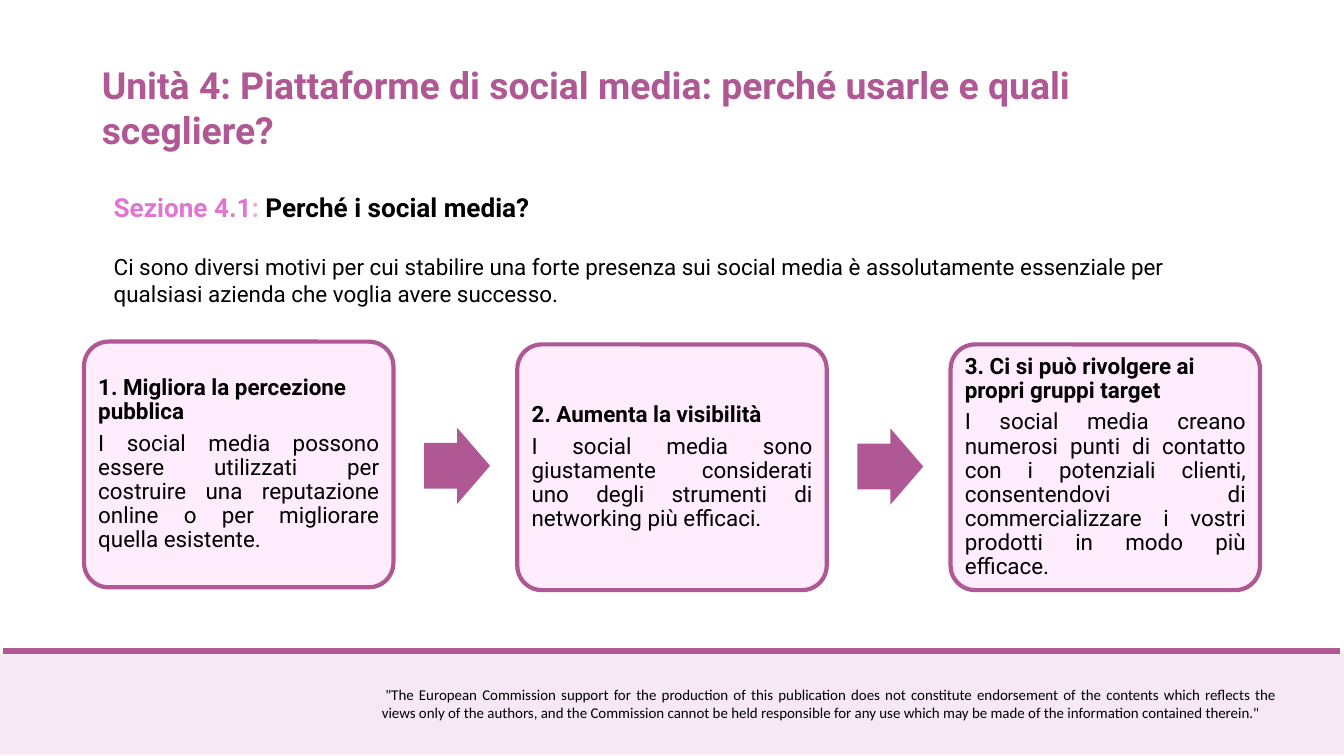
"""Build the slide on why companies should use social media."""
from pptx import Presentation
from pptx.dml.color import RGBColor
from pptx.enum.shapes import MSO_CONNECTOR, MSO_SHAPE
from pptx.enum.text import MSO_ANCHOR, MSO_AUTO_SIZE, PP_ALIGN
from pptx.oxml.ns import qn
from pptx.util import Emu, Pt
from lxml.etree import SubElement

COLORS = {
    "plum": "B05894",
    "orchid": "E076D1",
    "pink": "ECAAE3",
    "card": "FFECFC",
    "band": "F6E9F5",
    "black": "000000",
}
TITLE = "Unità 4: Piattaforme di social media: perché usarle e quali scegliere?"
SECTION = [("Sezione 4.1", "orchid"), (": ", "pink"), ("Perché i social media?", "black")]
INTRO = (
    "Ci sono diversi motivi per cui stabilire una forte presenza sui social media "
    "è assolutamente essenziale per qualsiasi azienda che voglia avere successo."
)
CARDS = [
    (
        "1. Migliora la percezione pubblica",
        "I social media possono essere utilizzati per costruire una reputazione "
        "online o per migliorare quella esistente.",
    ),
    (
        "2. Aumenta la visibilità",
        "I social media sono giustamente considerati uno degli strumenti di "
        "networking più efficaci.",
    ),
    (
        "3. Ci si può rivolgere ai propri gruppi target",
        "I social media creano numerosi punti di contatto con i potenziali clienti, "
        "consentendovi di commercializzare i vostri prodotti in modo più efficace.",
    ),
]
DISCLAIMER = (
    '"The European Commission support for the production of this publication does not '
    "constitute endorsement of the contents which reflects the views only of the authors, "
    "and the Commission cannot be held responsible for any use which may be made of the "
    'information contained therein."'
)

SLIDE_SIZE = (1920, 1080)
CARD_LEFT, CARD_TOPS, CARD_SIZE = 120, (488, 492, 492), (442, 351)
ARROW_LEFT, ARROW_TOPS, ARROW_SIZE = 606, (611, 612), (94, 109)
STEP = 619
CARD_INSET = 10
CARD_SPACING = {"line_spacing": 0.9, "space_after": Pt(8)}


def px(length):
    return Emu(length * 9525)


def color(name):
    return RGBColor.from_string(COLORS[name])


def apply(target, values):
    for name, value in values.items():
        setattr(target, name, value)


def write(paragraph, runs, size, bold=False, font="Roboto", **values):
    apply(paragraph, values)
    for text, color_name in runs:
        run = paragraph.add_run()
        run.text = text
        apply(run.font, {"name": font, "size": Pt(size), "bold": bold})
        run.font.color.rgb = color(color_name)


def add_text_box(slide, *box):
    frame = slide.shapes.add_textbox(*map(px, box)).text_frame
    apply(frame, {"word_wrap": True, "auto_size": MSO_AUTO_SIZE.SHAPE_TO_FIT_TEXT})
    return frame


def add_shape(slide, kind, box, fill, line=None, width=0):
    shape = slide.shapes.add_shape(kind, *map(px, box))
    shape.shadow.inherit = False
    shape.fill.solid()
    shape.fill.fore_color.rgb = color(fill)
    if line:
        shape.line.color.rgb = color(line)
        shape.line.width = Pt(width)
    else:
        shape.line.fill.background()
    return shape


def add_footer(slide):
    add_shape(slide, MSO_SHAPE.RECTANGLE, (0, 933, 1920, 145), "band")
    rule = slide.shapes.add_connector(MSO_CONNECTOR.STRAIGHT, px(5), px(930), px(1915), px(930))
    rule.line.color.rgb = color("plum")
    rule.line.width = Pt(6.75)
    SubElement(rule._element.spPr, qn("a:effectLst"))
    paragraph = add_text_box(slide, 536, 975, 1297, 61).paragraphs[0]
    paragraph._p.get_or_add_pPr().set("indent", str(px(5)))
    write(paragraph, [(DISCLAIMER, "black")], 16, font="Calibri", alignment=PP_ALIGN.JUSTIFY)


def add_headings(slide):
    title = add_text_box(slide, 136, 84, 1608, 139)
    write(title.paragraphs[0], [(TITLE, "plum")], 40, bold=True)
    section = add_text_box(slide, 153, 268, 1575, 178)
    write(section.paragraphs[0], SECTION, 28, bold=True)
    write(section.add_paragraph(), [(INTRO, "black")], 24, space_before=Pt(33))


def add_card(slide, left, top, heading, body):
    box = (left, top, *CARD_SIZE)
    card = add_shape(slide, MSO_SHAPE.ROUNDED_RECTANGLE, box, "card", "plum", 4.5)
    card.adjustments[0] = 0.1
    frame = card.text_frame
    apply(frame, {"word_wrap": True, "vertical_anchor": MSO_ANCHOR.MIDDLE})
    apply(frame, {f"margin_{side}": px(CARD_INSET) for side in ("left", "top", "right", "bottom")})
    write(frame.paragraphs[0], [(heading, "black")], 24, bold=True,
          alignment=PP_ALIGN.LEFT, **CARD_SPACING)
    write(frame.add_paragraph(), [(body, "black")], 24,
          alignment=PP_ALIGN.JUSTIFY, **CARD_SPACING)


def add_arrow(slide, left, top):
    arrow = add_shape(slide, MSO_SHAPE.RIGHT_ARROW, (left, top, *ARROW_SIZE), "plum")
    arrow.adjustments[0] = 0.6
    arrow.adjustments[1] = 0.5


def main():
    presentation = Presentation()
    presentation.slide_width, presentation.slide_height = map(px, SLIDE_SIZE)
    slide = presentation.slides.add_slide(presentation.slide_layouts[6])
    add_footer(slide)
    add_headings(slide)
    for index, (top, card) in enumerate(zip(CARD_TOPS, CARDS)):
        add_card(slide, CARD_LEFT + index * STEP, top, *card)
    for index, top in enumerate(ARROW_TOPS):
        add_arrow(slide, ARROW_LEFT + index * STEP, top)
    presentation.save("out.pptx")


if __name__ == "__main__":
    main()
